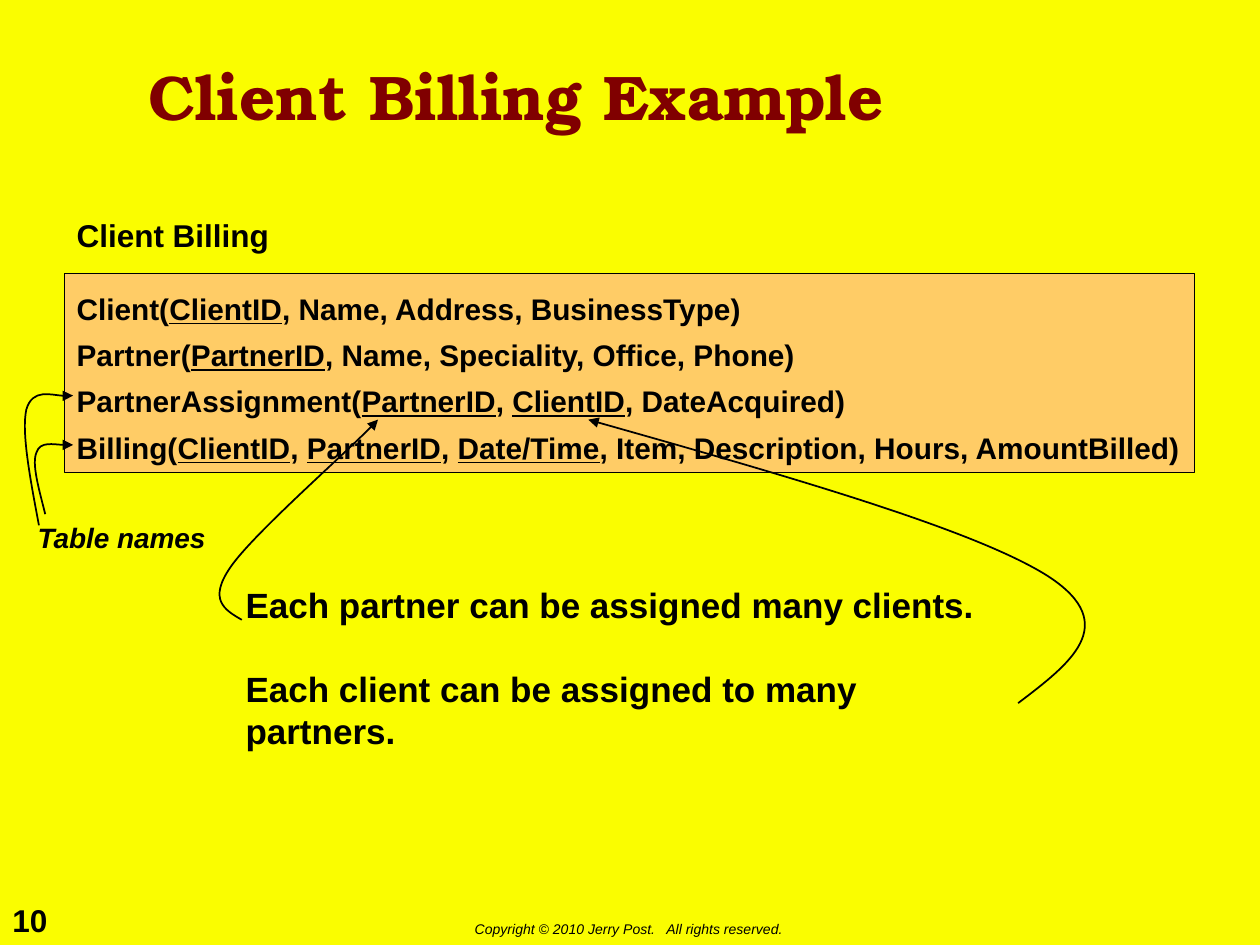
from dataclasses import dataclass

from lxml import etree
from pptx import Presentation
from pptx.dml.color import RGBColor
from pptx.enum.shapes import MSO_SHAPE
from pptx.enum.text import MSO_ANCHOR, MSO_AUTO_SIZE, PP_ALIGN
from pptx.oxml.ns import qn
from pptx.util import Pt

RECTANGLE = MSO_SHAPE.RECTANGLE
TOP, MIDDLE = MSO_ANCHOR.TOP, MSO_ANCHOR.MIDDLE
NO_AUTOFIT = MSO_AUTO_SIZE.NONE
LEFT, CENTER = PP_ALIGN.LEFT, PP_ALIGN.CENTER
TITLE_ONLY = 5


@dataclass(frozen=True)
class Theme:
    """Colours and type styles of the slide."""
    background = RGBColor(0xFA, 0xFD, 0x00)
    panel = RGBColor(0xFF, 0xCC, 0x66)
    accent = RGBColor(0x80, 0x00, 0x00)
    ink = RGBColor(0, 0, 0)
    title = {"name": "TeX Gyre Bonum", "size": Pt(36), "bold": True}
    heading = {"name": "Arial", "size": Pt(18), "bold": True}
    schema = {"name": "Arial", "size": Pt(17), "bold": True}
    rule = {"name": "Arial", "size": Pt(20), "bold": True}
    label = {"name": "Arial", "size": Pt(16), "bold": True, "italic": True}
    footer = {"name": "Arial", "size": Pt(8), "italic": True}


def assign(target, values):
    """Set every named attribute of the target."""
    for attribute, value in values.items():
        setattr(target, attribute, value)


def place(bounds):
    """Turn a box in points into lengths."""
    return [Pt(length) for length in bounds]


def schema_runs(table, keys, columns):
    """List the text pieces of a table schema with their underline flags."""
    runs = [(f"{table}(", False)]
    for position, key in enumerate(keys):
        if position:
            runs.append((", ", False))
        runs.append((key, True))
    return runs + [(f", {columns})", False)]


class SlideBuilder:
    """Hold the theme and the current slide, and draw elements on it."""

    def __init__(self, slide, theme):
        """Start on a slide with the theme's background."""
        self.slide, self.theme = slide, theme
        slide.background.fill.solid()
        slide.background.fill.fore_color.rgb = theme.background

    def fill_text(self, holder, lines, style, color=None, wrap=False, anchor=TOP, **layout):
        """Fill a shape with lines, each a list of text and underline pairs."""
        frame = holder.text_frame
        assign(frame, {"auto_size": NO_AUTOFIT, "word_wrap": wrap, "vertical_anchor": anchor})
        gap = layout.pop("gap", None)
        for position, pieces in enumerate(lines):
            paragraph = frame.add_paragraph() if position else frame.paragraphs[0]
            assign(paragraph, {"alignment": LEFT, **layout})
            if position and gap:
                paragraph.space_before = gap
            for words, underline in pieces:
                run = paragraph.add_run()
                run.text = words
                assign(run.font, {**style, "underline": underline})
                run.font.color.rgb = color or self.theme.ink

    def title(self, words, bounds):
        """Move and fill the title placeholder."""
        holder = self.slide.shapes.title
        assign(holder, dict(zip(("left", "top", "width", "height"), place(bounds))))
        self.fill_text(holder, [[(words, False)]], self.theme.title, self.theme.accent,
                       wrap=True, anchor=MIDDLE, line_spacing=0.9)

    def text(self, lines, bounds, style, **layout):
        """Add a text box with one paragraph per line."""
        holder = self.slide.shapes.add_textbox(*place(bounds))
        self.fill_text(holder, [[(line, False)] for line in lines], style, **layout)

    def schema_panel(self, tables, bounds):
        """Add the panel of table schemas with underlined keys."""
        panel = self.slide.shapes.add_shape(RECTANGLE, *place(bounds))
        panel.shadow.inherit = False
        panel.fill.solid()
        panel.fill.fore_color.rgb = self.theme.panel
        panel.line.color.rgb = self.theme.ink
        panel.line.width = Pt(0.75)
        self.fill_text(panel, [schema_runs(*table) for table in tables],
                       self.theme.schema, line_spacing=1.3)

    def curved_arrow(self, points):
        """Draw a start point and triples of Bezier points, ending in an arrowhead."""
        start, *controls = [place(point) for point in points]
        outline = self.slide.shapes.build_freeform(*start)
        outline.add_line_segments(controls, close=False)
        arrow = outline.convert_to_shape()
        arrow.shadow.inherit = False
        arrow.fill.background()
        arrow.line.color.rgb = self.theme.ink
        arrow.line.width = Pt(1)
        route = arrow.element.xpath(".//a:path")[0]
        segments = route.findall(qn("a:lnTo"))
        for first in range(0, len(segments), 3):
            bezier = etree.SubElement(route, qn("a:cubicBezTo"))
            for segment in segments[first:first + 3]:
                bezier.append(segment[0])
                route.remove(segment)
        stroke = arrow.element.xpath(".//a:ln")[0]
        etree.SubElement(stroke, qn("a:tailEnd"), type="triangle")


TABLES = [
    ("Client", ["ClientID"], "Name, Address, BusinessType"),
    ("Partner", ["PartnerID"], "Name, Speciality, Office, Phone"),
    ("PartnerAssignment", ["PartnerID", "ClientID"], "DateAcquired"),
    ("Billing", ["ClientID", "PartnerID", "Date/Time"],
     "Item, Description, Hours, AmountBilled"),
]
RULES = ["Each partner can be assigned many clients.",
         "Each client can be assigned to many partners."]
ARROWS = [
    [(25.9, 293.8), (22.3, 279.4), (18, 265), (20.9, 258.5),
     (23, 252), (38.2, 254.9), (41.8, 254.2)],
    [(22.3, 300.2), (17.3, 273.6), (12.2, 247), (15.1, 234),
     (18.7, 221.8), (37.4, 227.5), (41.8, 226.1)],
    [(138.2, 354.2), (128.2, 348.5), (118.8, 342.7), (131.8, 324),
     (144.7, 305.3), (202.3, 254.9), (216, 239.8)],
    [(581.8, 401.8), (611.3, 379.4), (640.8, 357.1), (599.8, 329.8),
     (558.7, 303.1), (447.8, 271.4), (336.2, 239.8)],
]


def main():
    """Build the client billing slide."""
    deck = Presentation()
    deck.slide_width, deck.slide_height = Pt(720), Pt(540)
    theme = Theme()
    builder = SlideBuilder(deck.slides.add_slide(deck.slide_layouts[TITLE_ONLY]), theme)
    builder.text(["10"], (0, 511.2, 36, 28.8), theme.heading)
    builder.text(["Copyright © 2010 Jerry Post.   All rights reserved."],
                 (264.2, 522.7, 193, 17.3), theme.footer)
    builder.title("Client Billing Example", (77.8, 12, 564, 90))
    builder.text(["Client Billing"], (36.7, 120.2, 124.6, 28.8), theme.heading)
    builder.schema_panel(TABLES, (36.7, 156.2, 645.8, 113.8))
    builder.text(RULES, (133.2, 342, 454.3, 79.2), theme.rule,
                 wrap=True, anchor=MIDDLE, gap=Pt(24))
    builder.text(["Table names"], (13.7, 293.8, 111.6, 26.6), theme.label, alignment=CENTER)
    for points in ARROWS:
        builder.curved_arrow(points)
    deck.save("out.pptx")


if __name__ == "__main__":
    main()
